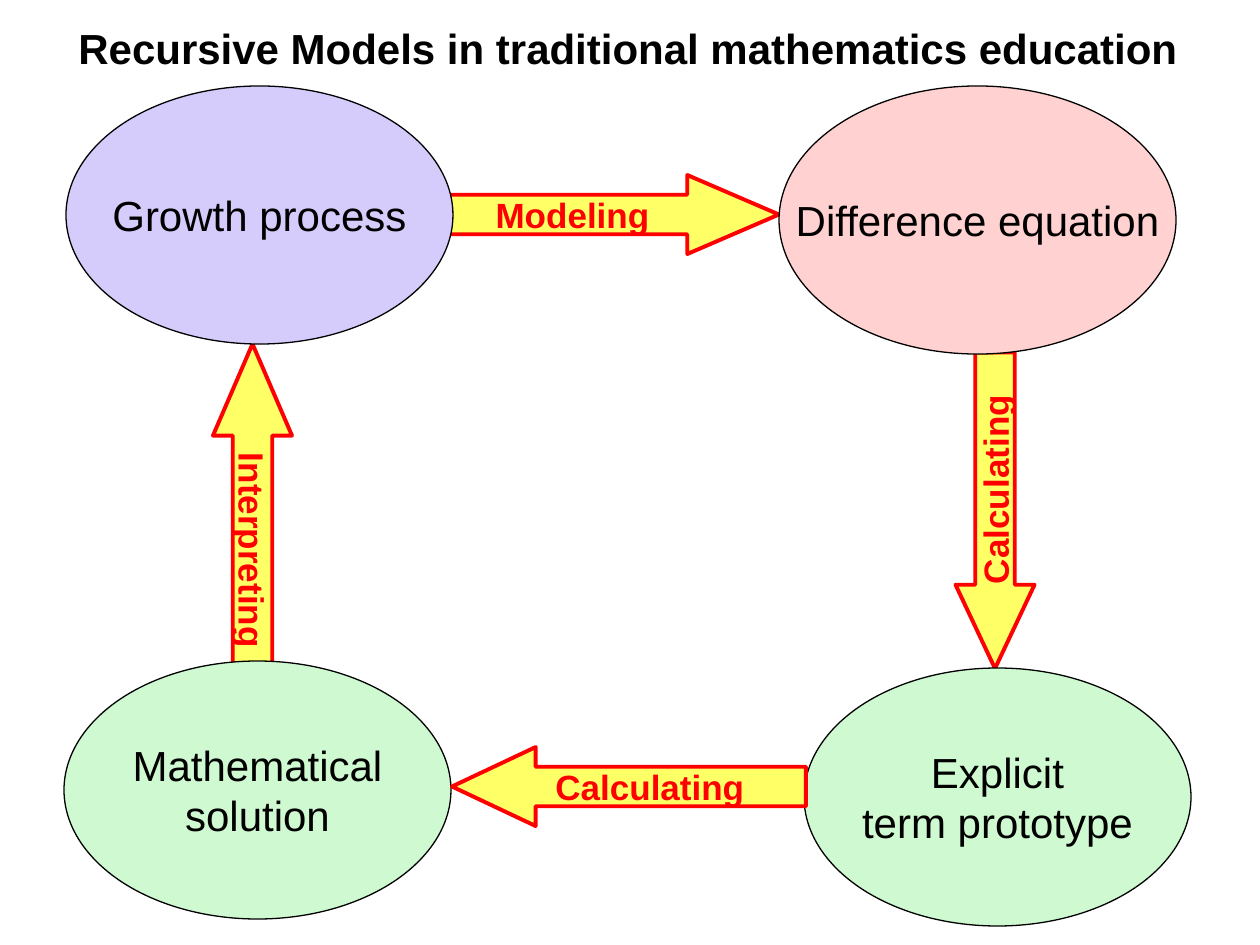
import pptx
import pptx.dml.color
import pptx.enum.shapes
import pptx.enum.text
import pptx.util

RGBColor = pptx.dml.color.RGBColor
MSO_SHAPE = pptx.enum.shapes.MSO_SHAPE
PP_ALIGN = pptx.enum.text.PP_ALIGN
MSO_ANCHOR = pptx.enum.text.MSO_ANCHOR
MSO_AUTO_SIZE = pptx.enum.text.MSO_AUTO_SIZE

PX = 914400 / 126  # EMU per px
SLIDE_SIZE = (1260, 945)

BLACK = RGBColor(0x00, 0x00, 0x00)
RED = RGBColor(0xFF, 0x00, 0x00)
YELLOW = RGBColor(0xFF, 0xFF, 0x66)
LILAC = RGBColor(0xD5, 0xCC, 0xFC)
PINK = RGBColor(0xFF, 0xD1, 0xD1)
GREEN = RGBColor(0xCF, 0xF9, 0xD0)

TITLE = "Recursive Models in traditional mathematics education"
TITLE_BOX = (66, 16, 1135, 64)

# Stages: lines of text, box in px, fill
STAGES = [
    (["Growth process"], (66, 86, 387, 258), LILAC),
    (["Difference equation"], (779, 86, 397, 268), PINK),
    (["Explicit", "term prototype"], (804, 668, 387, 258), GREEN),
    (["Mathematical", "solution"], (64, 661, 387, 258), GREEN),
]

# Steps: label, arrow, unrotated box in px, rotation, head length / arrow height
STEPS_BEHIND = [
    ("Interpreting", MSO_SHAPE.LEFT_ARROW, (69, 488, 367, 79), 90, 1.16),
    ("Calculating", MSO_SHAPE.LEFT_ARROW, (837, 471, 316, 79), 270, 1.06),
    ("Modeling", MSO_SHAPE.RIGHT_ARROW, (412, 175, 367, 79), 0, 1.16),
]
STEP_IN_FRONT = ("Calculating", MSO_SHAPE.LEFT_ARROW, (452, 747, 354, 79), 0, 1.06)


def emu(lengths):
    return [pptx.util.Emu(round(length * PX)) for length in lengths]


def write(frame, lines, *, size, color=BLACK, bold=False,
          align=PP_ALIGN.CENTER, anchor=MSO_ANCHOR.MIDDLE):
    frame.word_wrap = False
    frame.vertical_anchor = anchor
    for index, line in enumerate(lines):
        paragraph = frame.add_paragraph() if index else frame.paragraphs[0]
        paragraph.alignment = align
        run = paragraph.add_run()
        run.text = line
        run.font.name = "Arial"
        run.font.size = pptx.util.Pt(size)
        run.font.bold = bold
        run.font.color.rgb = color


def add_outlined(slide, preset, box, fill, line, width):
    outlined = slide.shapes.add_shape(preset, *emu(box))
    outlined.shadow.inherit = False
    outlined.fill.solid()
    outlined.fill.fore_color.rgb = fill
    outlined.line.color.rgb = line
    outlined.line.width = pptx.util.Pt(width)
    return outlined


def add_step(slide, label, preset, box, rotation, head):
    arrow = add_outlined(slide, preset, box, YELLOW, RED, 2.25)
    arrow.rotation = rotation
    arrow.adjustments[0] = 0.5
    arrow.adjustments[1] = head
    write(arrow.text_frame, [label], size=20, color=RED, bold=True)


def add_stage(slide, lines, box, fill):
    ellipse = add_outlined(slide, MSO_SHAPE.OVAL, box, fill, BLACK, 0.75)
    write(ellipse.text_frame, lines, size=24)


def main():
    deck = pptx.Presentation()
    deck.slide_width, deck.slide_height = emu(SLIDE_SIZE)
    slide = deck.slides.add_slide(deck.slide_layouts[6])

    # Title
    title = slide.shapes.add_textbox(*emu(TITLE_BOX))
    write(title.text_frame, [TITLE], size=24, bold=True,
          align=PP_ALIGN.LEFT, anchor=MSO_ANCHOR.TOP)
    title.text_frame.auto_size = MSO_AUTO_SIZE.SHAPE_TO_FIT_TEXT

    # Cycle: the stages cover the ends of the first three arrows
    for step in STEPS_BEHIND:
        add_step(slide, *step)
    for stage in STAGES:
        add_stage(slide, *stage)
    add_step(slide, *STEP_IN_FRONT)

    deck.save("out.pptx")


if __name__ == "__main__":
    main()
